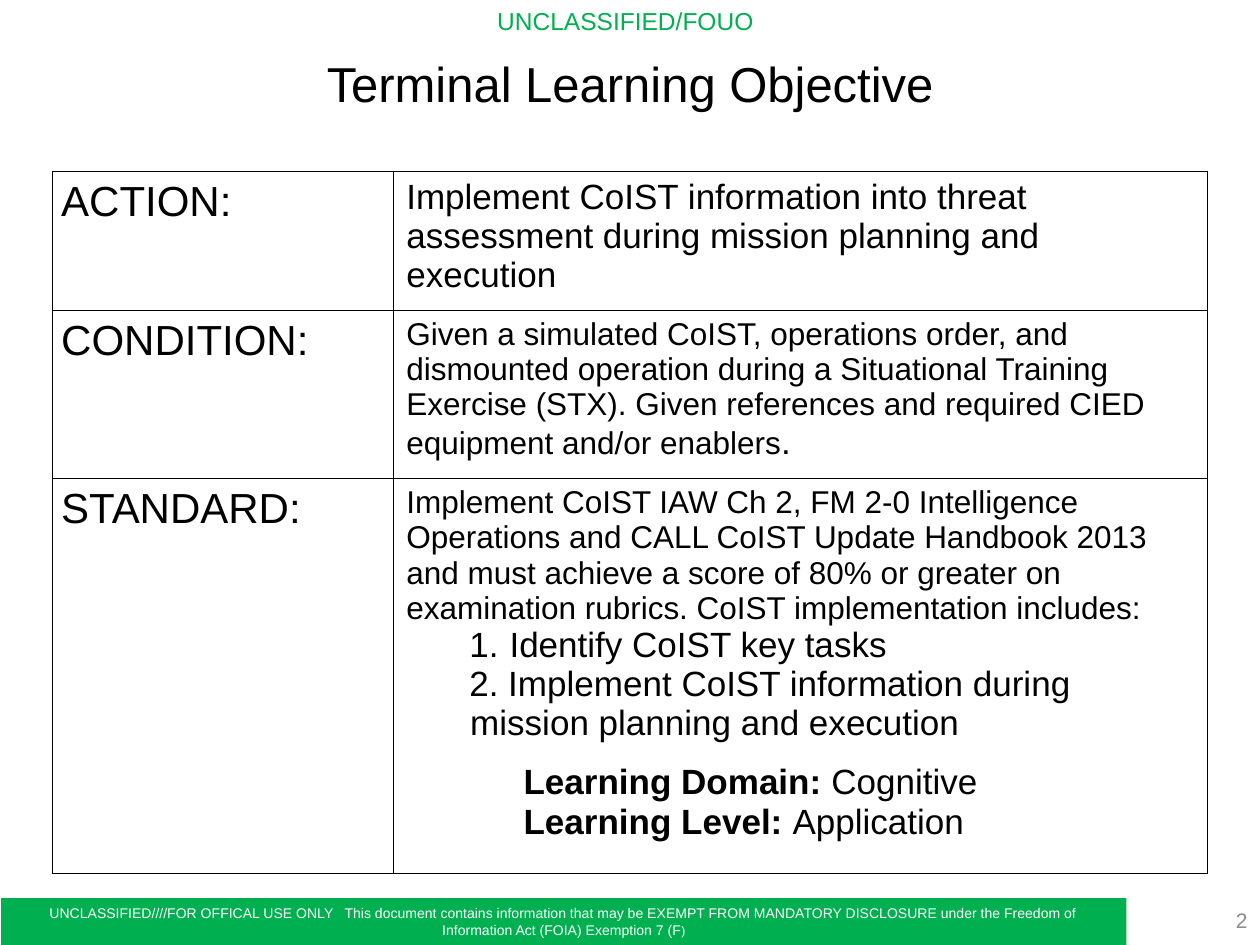
from lxml import etree
from pptx import Presentation
from pptx.dml.color import RGBColor
from pptx.enum.shapes import MSO_SHAPE
from pptx.enum.text import MSO_ANCHOR, PP_ALIGN
from pptx.oxml.ns import qn
from pptx.util import Pt

RECT = MSO_SHAPE.RECTANGLE
TOP, MIDDLE = MSO_ANCHOR.TOP, MSO_ANCHOR.MIDDLE
LEFT, CENTER, RIGHT = PP_ALIGN.LEFT, PP_ALIGN.CENTER, PP_ALIGN.RIGHT

GREEN = RGBColor(0x00, 0xB0, 0x50)
BLACK = RGBColor(0x00, 0x00, 0x00)
WHITE = RGBColor(0xFF, 0xFF, 0xFF)
GREY = RGBColor(0x8C, 0x8C, 0x8C)
FONT = "Arial"
TITLE_ONLY = 5

COLUMNS = [195, 465]
ROW_HEIGHTS = [79.5, 96, 225.5]
LABELS = ["ACTION:", "CONDITION:", "STANDARD:"]

# Each paragraph: runs (text, size, bold), then optional layout settings
CONTENTS = [
    [dict(runs=[("Implement CoIST information into threat assessment during "
                 "mission planning and execution", 20, False)])],
    [dict(runs=[("Given a simulated CoIST, operations order, and dismounted "
                 "operation during a Situational Training Exercise (STX). Given "
                 "references and required CIED equipment and/or enablers", 18, False),
                (".", 20, False)])],
    [dict(runs=[("Implement CoIST IAW Ch 2, FM 2-0 Intelligence Operations and "
                 "CALL CoIST Update Handbook 2013 and must achieve a score of 80% "
                 "or greater on examination rubrics. CoIST implementation "
                 "includes:", 18, False)]),
     dict(runs=[("Identify CoIST key tasks", 20, False)],
          margin=59, indent=-23, numbered=True),
     dict(runs=[(" Implement CoIST information during mission planning and "
                 "execution", 20, False)],
          margin=36.5, indent=-0.5, numbered=True),
     dict(runs=[("Learning Domain: ", 20, True), ("Cognitive", 20, False)],
          margin=67, before=11.5),
     dict(runs=[("Learning Level: ", 20, True), ("Application", 20, False)],
          margin=67)],
]


def add_run(p, text, size, color, bold=False):
    r = p.add_run()
    r.text = text
    r.font.name = FONT
    r.font.size = Pt(size)
    r.font.bold = bold
    r.font.color.rgb = color


def fill_paragraph(p, runs, margin=0, indent=0, numbered=False, before=0):
    pPr = p._p.get_or_add_pPr()
    pPr.set("marL", str(Pt(margin)))
    pPr.set("indent", str(Pt(indent)))
    if before:
        p.space_before = Pt(before)
    if numbered:
        p.level = 1
        etree.SubElement(pPr, qn("a:buFont"), typeface="+mj-lt")
        etree.SubElement(pPr, qn("a:buAutoNum"), type="arabicPeriod")
    for text, size, bold in runs:
        add_run(p, text, size, BLACK, bold)


def style_cell(cell):
    cell.fill.solid()
    cell.fill.fore_color.rgb = WHITE
    cell.vertical_anchor = TOP
    tcPr = cell._tc.get_or_add_tcPr()
    for i, side in enumerate(("a:lnL", "a:lnR", "a:lnT", "a:lnB")):
        ln = etree.Element(qn(side), w=str(Pt(1)))
        solid = etree.SubElement(ln, qn("a:solidFill"))
        etree.SubElement(solid, qn("a:srgbClr"), val=str(BLACK))
        tcPr.insert(i, ln)


def add_label(slide, box, text, size, color, align, anchor, wrap=True):
    s = slide.shapes.add_textbox(*map(Pt, box))
    tf = s.text_frame
    tf.word_wrap = wrap
    tf.vertical_anchor = anchor
    p = tf.paragraphs[0]
    p.alignment = align
    add_run(p, text, size, color)


def add_title(slide, box):
    title = slide.shapes.title
    title.left, title.top, title.width, title.height = map(Pt, box)
    tf = title.text_frame
    tf.vertical_anchor = MIDDLE
    p = tf.paragraphs[0]
    p.alignment = CENTER
    add_run(p, "Terminal Learning Objective", 28, BLACK)


def add_notice_bar(slide, box):
    bar = slide.shapes.add_shape(RECT, *map(Pt, box))
    bar.shadow.inherit = False
    bar.fill.solid()
    bar.fill.fore_color.rgb = GREEN
    bar.line.fill.background()
    tf = bar.text_frame
    tf.word_wrap = True
    tf.vertical_anchor = MIDDLE
    p = tf.paragraphs[0]
    p.alignment = CENTER
    add_run(p, "UNCLASSIFIED////FOR OFFICAL USE ONLY   This document contains "
               "information that may be EXEMPT FROM MANDATORY DISCLOSURE under "
               "the Freedom of Information Act (FOIA) Exemption 7 (F", 8, WHITE)
    add_run(p, ")", 7, WHITE)


def add_objective_table(slide, box):
    frame = slide.shapes.add_table(len(LABELS), len(COLUMNS), *map(Pt, box))
    table = frame.table
    table.first_row = table.horz_banding = False
    for column, width in zip(table.columns, COLUMNS):
        column.width = Pt(width)

    for row, height, label, paragraphs in zip(table.rows, ROW_HEIGHTS, LABELS, CONTENTS):
        row.height = Pt(height)
        name, content = row.cells
        style_cell(name)
        style_cell(content)

        # Label column
        name.margin_left = name.margin_right = Pt(5)
        name.margin_top = name.margin_bottom = Pt(0)
        p = name.text_frame.paragraphs[0]
        p.line_spacing = 1.15
        add_run(p, label, 24, BLACK)

        # Description column
        tf = content.text_frame
        for i, settings in enumerate(paragraphs):
            p = tf.add_paragraph() if i else tf.paragraphs[0]
            fill_paragraph(p, **settings)


def main():
    prs = Presentation()
    prs.slide_width, prs.slide_height = Pt(720), Pt(540)
    slide = prs.slides.add_slide(prs.slide_layouts[TITLE_ONLY])

    add_label(slide, (277, 0, 165, 24.5), "UNCLASSIFIED/FOUO", 14, GREEN,
              LEFT, TOP, wrap=False)
    add_notice_bar(slide, (0.7, 513.3, 643, 26.7))
    add_objective_table(slide, (30, 98, sum(COLUMNS), sum(ROW_HEIGHTS)))
    add_title(slide, (36, 21.6, 648, 52))
    add_label(slide, (655, 511, 65, 29), "2", 12, GREY, RIGHT, MIDDLE)

    prs.save("out.pptx")


if __name__ == "__main__":
    main()
